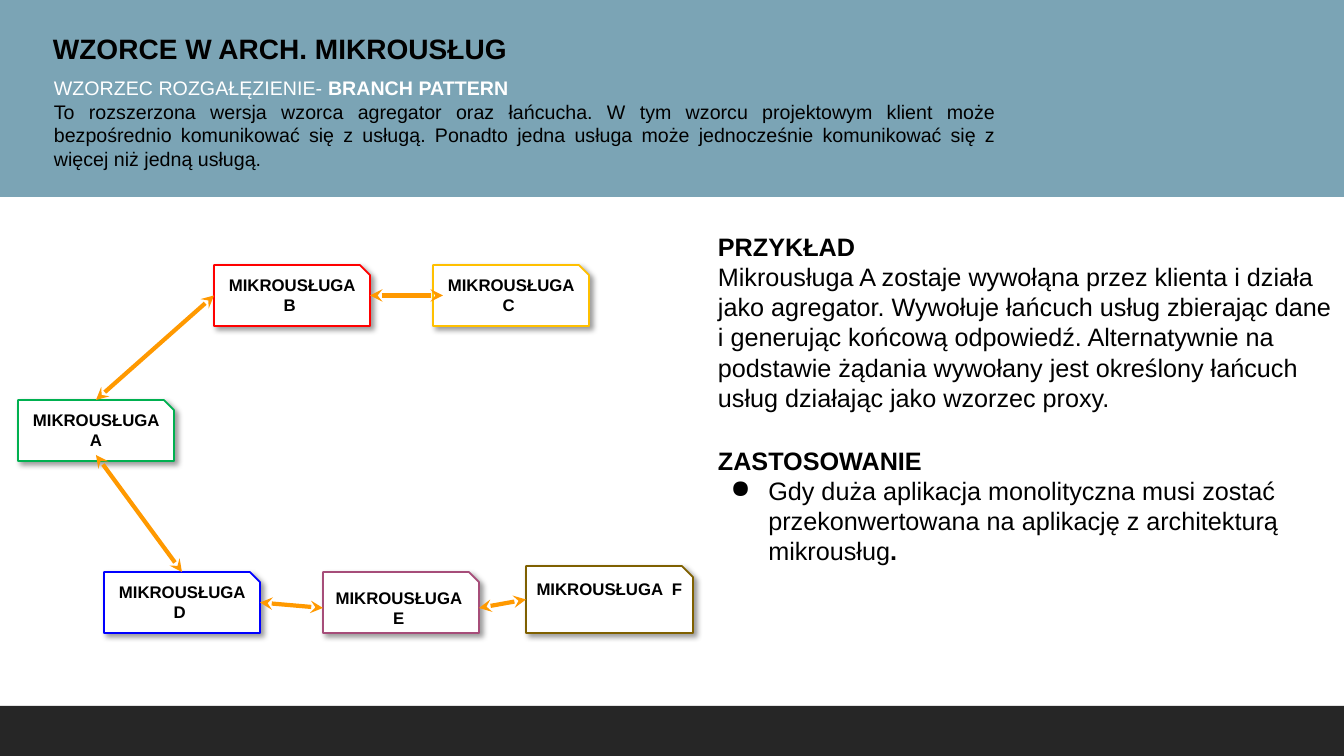
from lxml import etree
from pptx import Presentation, util as u
from pptx.dml import color
from pptx.enum import shapes, text
from pptx.oxml import parse_xml, ns

PX = 9071
BLACK, WHITE, ORANGE = "000000", "FFFFFF", "FF9900"
SHADE = f"""<a:effectLst {ns.nsdecls("a")}>
<a:outerShdw blurRad="50800" dist="38100" dir="2700000" algn="tl" rotWithShape="0">
<a:srgbClr val="{BLACK}"><a:alpha val="40000"/></a:srgbClr></a:outerShdw></a:effectLst>"""


def hue(code):
    return color.RGBColor.from_string(code)


def write(place, lines, size, align=text.PP_ALIGN.LEFT):
    box = slide.shapes.add_textbox(*[n * PX for n in place])
    frame = box.text_frame
    frame.word_wrap = True
    for row, line in enumerate(lines):
        para = frame.paragraphs[0] if row == 0 else frame.add_paragraph()
        para.alignment = align
        for words, bold, code in line:
            run = para.add_run()
            run.text = words
            style = {"name": "Arial", "size": u.Pt(size), "bold": bold}
            for key, value in style.items():
                setattr(run.font, key, value)
            run.font.color.rgb = hue(code)
    return box


deck = Presentation()
deck.slide_width, deck.slide_height = 1344 * PX, 756 * PX
slide = deck.slides.add_slide(deck.slide_layouts[6])

bands = [((0, 706, 1344, 50), "262626"), ((0, 0, 1344, 197), "7BA4B5")]
for place, code in bands:
    band = slide.shapes.add_shape(shapes.MSO_SHAPE.RECTANGLE, *[n * PX for n in place])
    band.shadow.inherit = False
    band.fill.solid()
    band.fill.fore_color.rgb = hue(code)
    band.line.fill.background()

write((43, 27, 679, 44), [[("WZORCE W ARCH. MIKROUSŁUG", True, BLACK)]], 20)
write((708, 226, 636, 194), [
    [("PRZYKŁAD", True, BLACK)],
    [("Mikrousługa A zostaje wywołąna przez klienta i działa jako agregator. "
      "Wywołuje łańcuch usług zbierając dane i generując końcową odpowiedź. "
      "Alternatywnie na podstawie żądania wywołany jest określony łańcuch usług "
      "działając jako wzorzec proxy.", False, BLACK)],
], 18)
usage = write((708, 440, 636, 132), [
    [("ZASTOSOWANIE", True, BLACK)],
    [("Gdy duża aplikacja monolityczna musi zostać przekonwertowana na aplikację "
      "z architekturą mikrousług", False, BLACK), (".", True, BLACK)],
], 18)
props = usage.text_frame.paragraphs[1]._p.get_or_add_pPr()
props.set("marL", "457200")
props.set("indent", "-342900")
tone = etree.SubElement(props, ns.qn("a:buClr"))
etree.SubElement(tone, ns.qn("a:srgbClr"), val=BLACK)
etree.SubElement(props, ns.qn("a:buChar"), char="●")
write((44, 71, 962, 105), [
    [("WZORZEC ROZGAŁĘZIENIE- ", False, WHITE), ("BRANCH PATTERN", True, WHITE)],
    [("To rozszerzona wersja wzorca agregator oraz łańcucha. W tym wzorcu projektowym "
      "klient może bezpośrednio komunikować się z usługą. Ponadto jedna usługa może "
      "jednocześnie komunikować się z więcej niż jedną usługą.", False, BLACK)],
], 14, text.PP_ALIGN.JUSTIFY)

nodes = [
    ("A", "MIKROUSŁUGA A", (18, 400, 156, 61), 5, "00B050"),
    ("B", "MIKROUSŁUGA B ", (214, 265, 156, 61), 5, "FF0000"),
    ("C", "MIKROUSŁUGA C ", (433, 265, 156, 61), 5, "FFC000"),
    ("D", "MIKROUSŁUGA D ", (104, 572, 156, 61), 5, "0000FF"),
    ("E", "MIKROUSŁUGA  E ", (323, 572, 156, 61), 11, "A64D79"),
    ("F", "MIKROUSŁUGA  F ", (526, 566, 167, 67), 8, "7F6000"),
]
cards, labels = {}, {}
for name, words, (left, top, width, height), drop, code in nodes:
    card = slide.shapes.add_shape(
        shapes.MSO_SHAPE.SNIP_1_RECTANGLE, left * PX, top * PX, width * PX, height * PX)
    card.adjustments[0] = 0.167
    card.fill.solid()
    card.fill.fore_color.rgb = hue(WHITE)
    card.line.color.rgb = hue(code)
    card.line.width = u.Pt(1.25)
    card._element.spPr.append(parse_xml(SHADE))
    cards[name] = card
    labels[name] = write((left, top + drop, width, 50), [[(words, True, BLACK)]],
                         12, text.PP_ALIGN.CENTER)

TOP, LEFT, BOTTOM, RIGHT = range(4)
links = [
    (cards["A"], TOP, cards["B"], LEFT),
    (labels["A"], BOTTOM, cards["D"], TOP),
    (cards["B"], RIGHT, None, None),
    (cards["D"], RIGHT, labels["E"], LEFT),
    (labels["E"], RIGHT, cards["F"], LEFT),
]
for start, out, goal, into in links:
    link = slide.shapes.add_connector(
        shapes.MSO_CONNECTOR.STRAIGHT, 370 * PX, 295 * PX, 443 * PX, 295 * PX)
    link.begin_connect(start, out)
    if goal is None:
        link.end_y = link.begin_y
    else:
        link.end_connect(goal, into)
    link.line.color.rgb = hue(ORANGE)
    link.line.width = u.Pt(3)
    stroke = link.line._get_or_add_ln()
    for end in ("a:headEnd", "a:tailEnd"):
        etree.SubElement(stroke, ns.qn(end), type="stealth")
    etree.SubElement(link._element.spPr, ns.qn("a:effectLst"))

deck.save("out.pptx")
